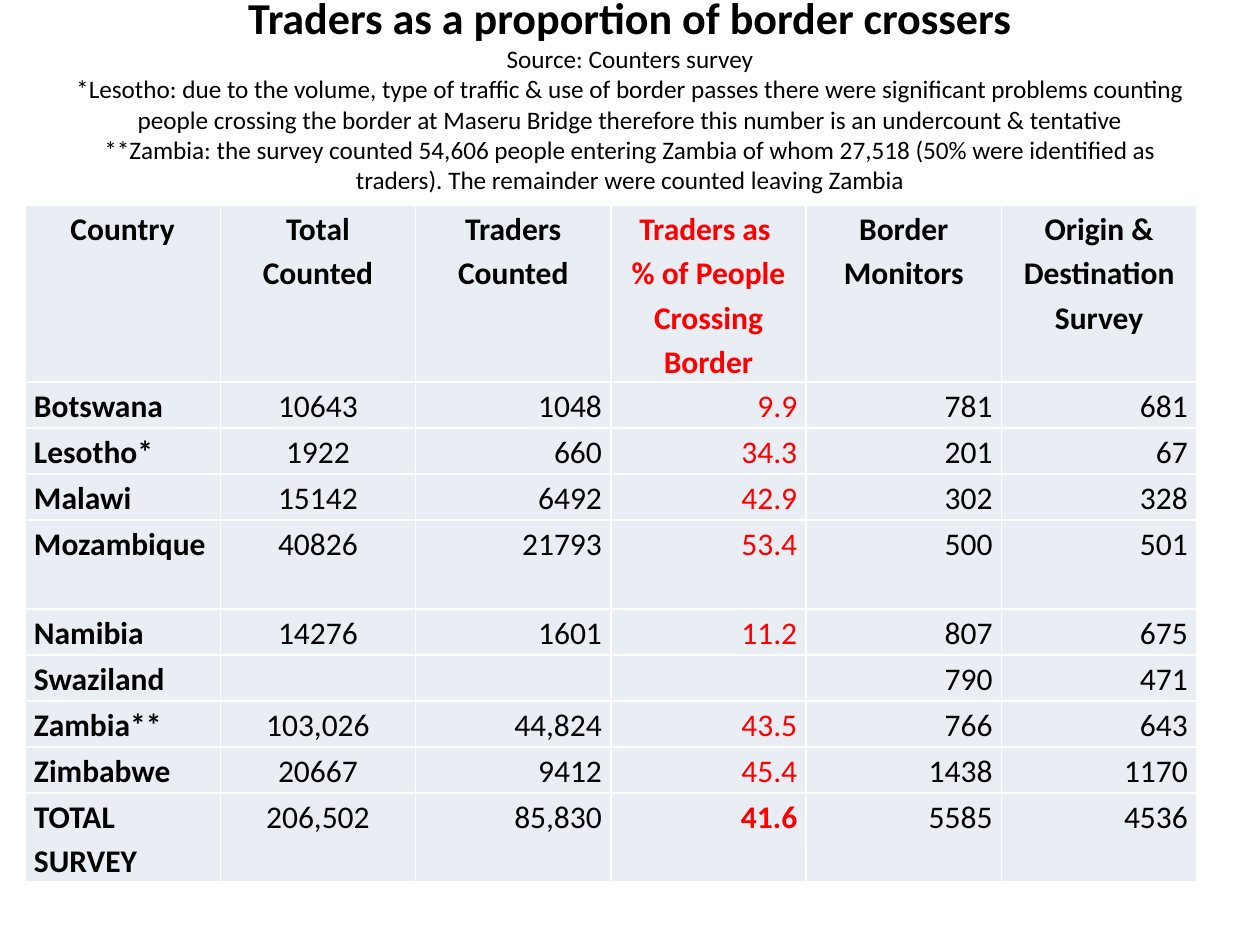
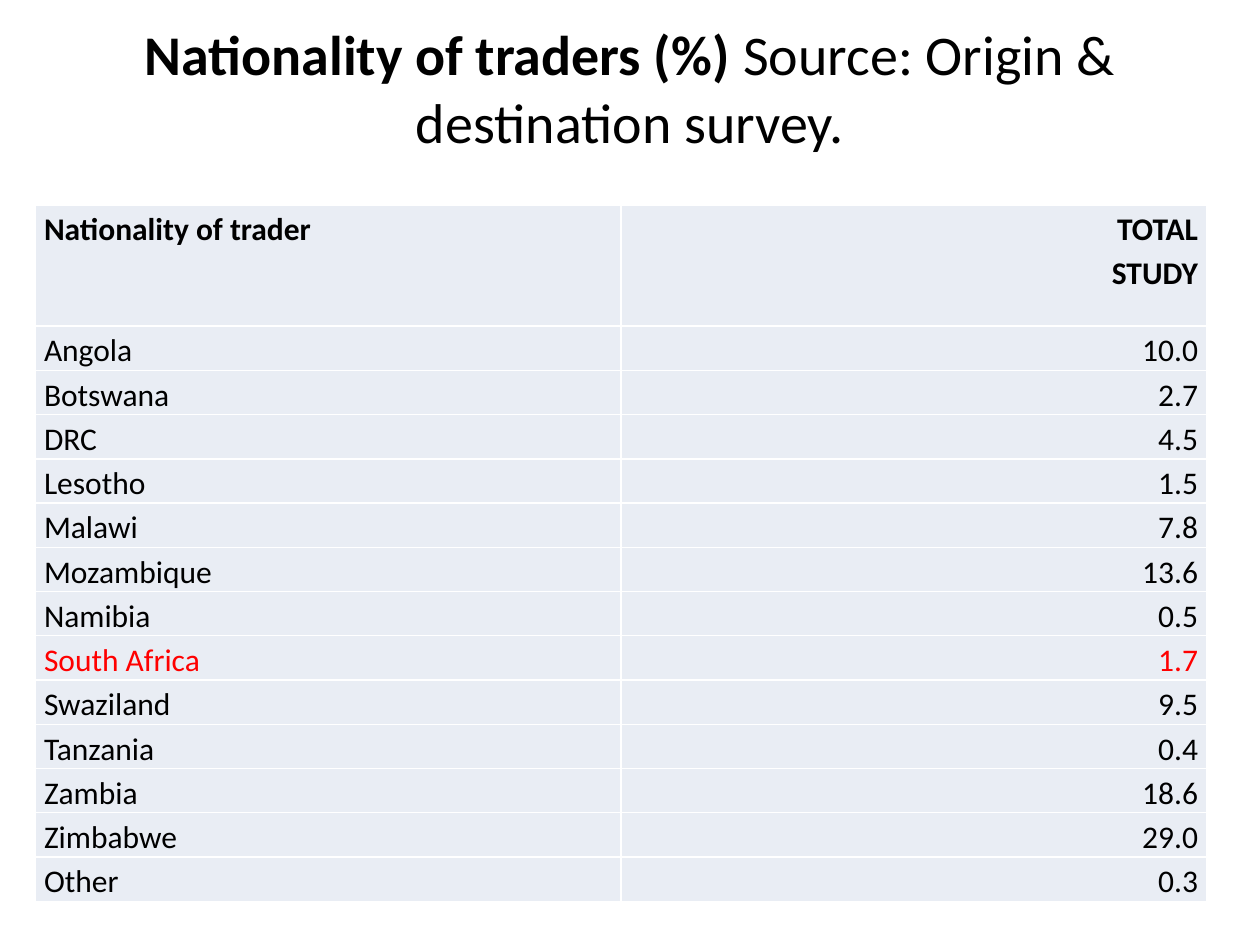
from copy import deepcopy

from lxml import etree
from pptx import Presentation
from pptx import util as u
from pptx.dml.color import RGBColor
from pptx.enum import text
from pptx.oxml import ns

BLACK = RGBColor(0x00, 0x00, 0x00)
RED = RGBColor(0xFF, 0x00, 0x00)
WHITE = RGBColor(0xFF, 0xFF, 0xFF)
CELL_FILL = RGBColor(0xE9, 0xED, 0xF4)

LEFT = text.PP_ALIGN.LEFT
CENTER = text.PP_ALIGN.CENTER
RIGHT = text.PP_ALIGN.RIGHT

CROSSINGS_TITLE = "\v".join([
    "Traders as a proportion of border crossers",
    "Source: Counters survey",
    "*Lesotho: due to the volume, type of traffic & use of border passes there were "
    "significant problems counting people crossing the border at Maseru Bridge "
    "therefore this number is an undercount & tentative",
    "**Zambia: the survey counted 54,606 people entering Zambia of whom 27,518 "
    "(50% were identified as traders). The remainder were counted leaving Zambia",
])

CROSSINGS = [
    ("Country", "Total Counted", "Traders Counted",
     "Traders as \n% of People Crossing Border", "Border Monitors",
     "Origin & Destination Survey"),
    ("Botswana", "10643", "1048", "9.9", "781", "681"),
    ("Lesotho*", "1922", "660", "34.3", "201", "67"),
    ("Malawi", "15142", "6492", "42.9", "302", "328"),
    ("Mozambique", "40826", "21793", "53.4", "500", "501"),
    ("Namibia", "14276", "1601", "11.2", "807", "675"),
    ("Swaziland", "", "", "", "790", "471"),
    ("Zambia**", "103,026", "44,824", "43.5", "766", "643"),
    ("Zimbabwe", "20667", "9412", "45.4", "1438", "1170"),
    ("TOTAL SURVEY", "206,502", "85,830", "41.6", "5585", "4536"),
]

NATIONALITIES = [
    ("Nationality of trader", "TOTAL\nSTUDY"),
    ("Angola", "10.0"),
    ("Botswana", "2.7"),
    ("DRC", "4.5"),
    ("Lesotho", "1.5"),
    ("Malawi", "7.8"),
    ("Mozambique", "13.6"),
    ("Namibia", "0.5"),
    ("South Africa", "1.7"),
    ("Swaziland", "9.5"),
    ("Tanzania", "0.4"),
    ("Zambia", "18.6"),
    ("Zimbabwe", "29.0"),
    ("Other", "0.3"),
]


def px(length):
    return u.Emu(round(length * 914400 / 126))


def crossings_style(row, column):
    last_row = len(CROSSINGS) - 1
    align = CENTER if row == 0 or column == 1 else LEFT if column == 0 else RIGHT
    bold = row == 0 or column == 0 or (row, column) == (last_row, 3)
    return align, bold, RED if column == 3 else BLACK


def nationality_style(row, column):
    color = RED if NATIONALITIES[row][0] == "South Africa" else BLACK
    return RIGHT if column else LEFT, row == 0, color


class SurveyDeck:
    font = "Calibri"
    table_size = 18
    line_spacing = 1.15
    inset = 9

    def __init__(self):
        self.presentation = Presentation()
        self.presentation.slide_width = px(1260)
        self.presentation.slide_height = px(945)
        self.slide = None

    def add_slide(self):
        layout = self.presentation.slide_layouts[5]
        self.slide = self.presentation.slides.add_slide(layout)

    def format_run(self, run, size, bold, color=BLACK):
        run.font.name = self.font
        run.font.size = u.Pt(size)
        run.font.bold = bold
        run.font.color.rgb = color

    def title(self, parts, sizes, bottom_inset):
        shape = self.slide.shapes.title
        shape.left, shape.top = px(63), px(38)
        shape.width, shape.height = px(1134), px(157)
        frame = shape.text_frame
        frame.word_wrap = True
        frame.auto_size = text.MSO_AUTO_SIZE.NONE
        frame.vertical_anchor = text.MSO_ANCHOR.MIDDLE
        frame.margin_bottom = px(bottom_inset)
        paragraph = frame.paragraphs[0]
        paragraph.text = parts[0]
        for part in parts[1:]:
            paragraph.add_run().text = part
        paragraph.alignment = CENTER
        for index, run in enumerate(paragraph.runs):
            self.format_run(run, sizes[min(index, 1)], index == 0)
        for line_break in paragraph._p.findall(ns.qn("a:br")):
            properties = line_break.getprevious().find(ns.qn("a:rPr"))
            line_break.insert(0, deepcopy(properties))

    def borders(self, cell):
        properties = cell._tc.get_or_add_tcPr()
        for side in ("lnL", "lnR", "lnT", "lnB"):
            line = etree.SubElement(properties, ns.qn(f"a:{side}"), w=str(u.Pt(1)))
            fill = etree.SubElement(line, ns.qn("a:solidFill"))
            etree.SubElement(fill, ns.qn("a:srgbClr"), val=str(WHITE))

    def cell(self, cell, content, align, bold, color):
        cell.margin_left = cell.margin_right = px(self.inset)
        cell.margin_top = cell.margin_bottom = 0
        self.borders(cell)
        cell.fill.solid()
        cell.fill.fore_color.rgb = CELL_FILL
        cell.text_frame.text = content
        for paragraph in cell.text_frame.paragraphs:
            paragraph.alignment = align
            paragraph.line_spacing = self.line_spacing
            for run in paragraph.runs:
                self.format_run(run, self.table_size, bold, color)

    def table(self, left, rows, heights, style):
        table = self.slide.shapes.add_table(
            len(rows), len(rows[0]), px(left), px(205), px(1172), px(sum(heights))).table
        table.first_row = table.horz_banding = False
        for row, values in enumerate(rows):
            table.rows[row].height = px(heights[row])
            for column, value in enumerate(values):
                self.cell(table.cell(row, column), value, *style(row, column))


def main():
    deck = SurveyDeck()

    deck.add_slide()
    deck.title([CROSSINGS_TITLE], (25.2, 14.4), 54)
    two_line_rows = ("Mozambique", "TOTAL SURVEY")
    heights = [176] + [89 if row[0] in two_line_rows else 46 for row in CROSSINGS[1:]]
    deck.table(25, CROSSINGS, heights, crossings_style)

    deck.add_slide()
    deck.title(["Nationality of traders (%) ", "Source: Origin & destination survey."],
               (32, 32), 65)
    heights = [121] + [44] * (len(NATIONALITIES) - 1)
    deck.table(35, NATIONALITIES, heights, nationality_style)

    deck.presentation.save("out.pptx")


if __name__ == "__main__":
    main()
